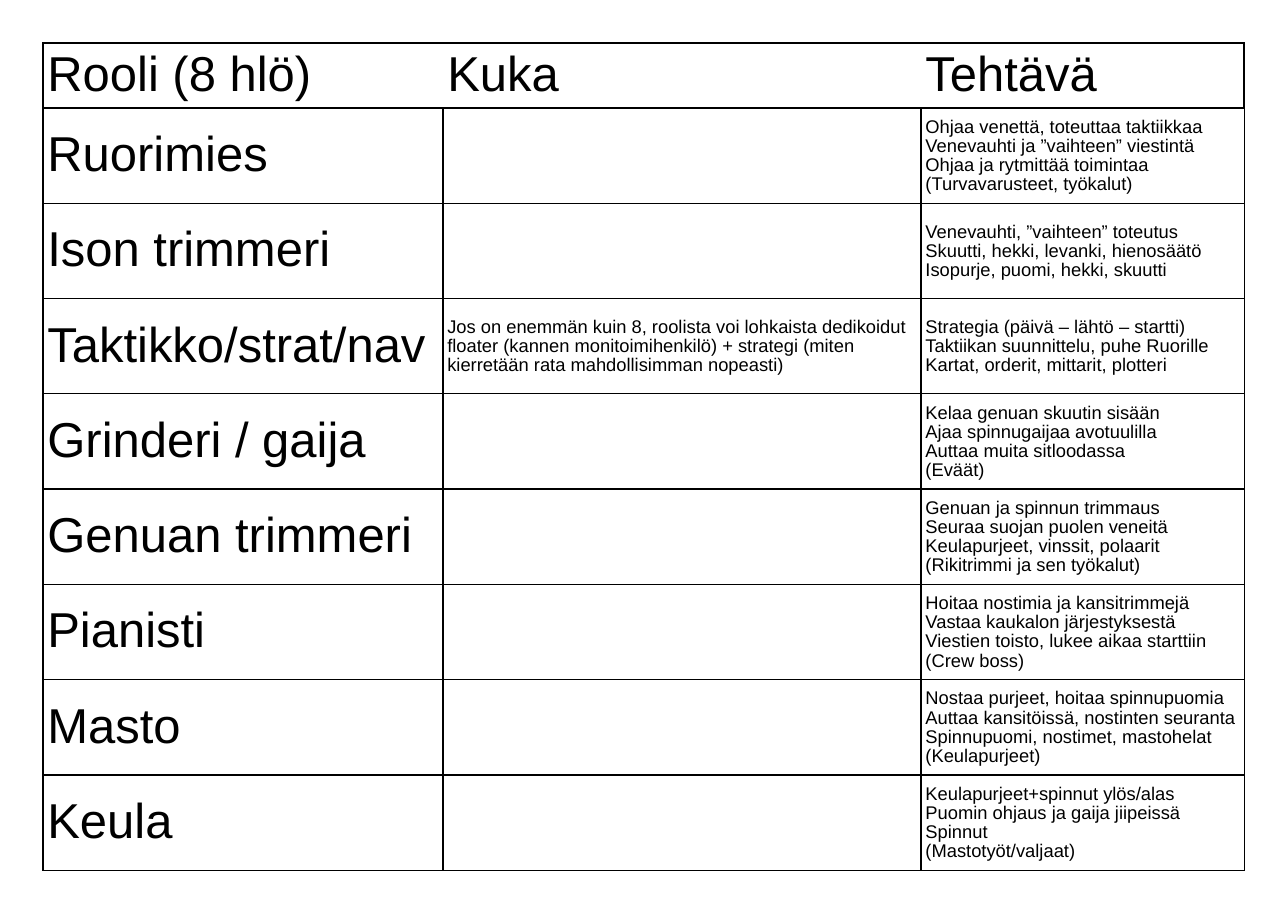
from lxml import etree
from pptx import Presentation
from pptx import util as u
from pptx.dml.color import RGBColor
from pptx.enum import text
from pptx.oxml.ns import qn

PX = 4572  # 200 px to the inch
INK = "000000"
THIN, THICK = 1, 1.42
HEADINGS = ["Rooli (8 hlö)", "Kuka", "Tehtävä"]
EXTRA_CREW = ("Jos on enemmän kuin 8, roolista voi lohkaista dedikoidut floater "
              "(kannen monitoimihenkilö) + strategi (miten kierretään rata "
              "mahdollisimman nopeasti)")
CREW = [
    ("Ruorimies", "", ["Ohjaa venettä, toteuttaa taktiikkaa",
                       "Venevauhti ja ”vaihteen” viestintä",
                       "Ohjaa ja rytmittää toimintaa",
                       "(Turvavarusteet, työkalut)"]),
    ("Ison trimmeri", "", ["Venevauhti, ”vaihteen” toteutus",
                           "Skuutti, hekki, levanki, hienosäätö",
                           "Isopurje, puomi, hekki, skuutti"]),
    ("Taktikko/strat/nav", EXTRA_CREW, ["Strategia (päivä – lähtö – startti)",
                                        "Taktiikan suunnittelu, puhe Ruorille",
                                        "Kartat, orderit, mittarit, plotteri"]),
    ("Grinderi / gaija", "", ["Kelaa genuan skuutin sisään",
                              "Ajaa spinnugaijaa avotuulilla",
                              "Auttaa muita sitloodassa",
                              "(Eväät)"]),
    ("Genuan trimmeri", "", ["Genuan ja spinnun trimmaus",
                             "Seuraa suojan puolen veneitä",
                             "Keulapurjeet, vinssit, polaarit",
                             "(Rikitrimmi ja sen työkalut)"]),
    ("Pianisti", "", ["Hoitaa nostimia ja kansitrimmejä",
                      "Vastaa kaukalon järjestyksestä",
                      "Viestien toisto, lukee aikaa starttiin",
                      "(Crew boss)"]),
    ("Masto", "", ["Nostaa purjeet, hoitaa spinnupuomia",
                   "Auttaa kansitöissä, nostinten seuranta",
                   "Spinnupuomi, nostimet, mastohelat",
                   "(Keulapurjeet)"]),
    ("Keula", "", ["Keulapurjeet+spinnut ylös/alas",
                   "Puomin ohjaus ja gaija jiipeissä",
                   "Spinnut",
                   "(Mastotyöt/valjaat)"]),
]


def px(length):
    return u.Emu(length * PX)


def color(hex_code):
    return RGBColor.from_string(hex_code)


def write(frame, lines, size=12, font="Arial", ink=INK, spacing=0.93):
    frame.text = "\n".join(lines)
    for paragraph in frame.paragraphs:
        paragraph.line_spacing = spacing
        paragraph.font.size = u.Pt(size)
        for run in paragraph.runs:
            run.font.size = u.Pt(size)
            run.font.name = font
            run.font.color.rgb = color(ink)


def set_borders(cell, left=THIN, right=THIN, top=THIN, bottom=THIN):
    """Draw the cell's four sides in points; a width of 0 hides the side."""
    properties = cell._tc.get_or_add_tcPr()
    for side, width in zip("LRTB", (left, right, top, bottom)):
        line = etree.SubElement(properties, qn(f"a:ln{side}"), w=str(u.Pt(width)))
        if width:
            fill = etree.SubElement(line, qn("a:solidFill"))
            etree.SubElement(fill, qn("a:srgbClr"), val=INK)
        else:
            etree.SubElement(line, qn("a:noFill"))


def fill_cell(cell, lines, size, **borders):
    set_borders(cell, **borders)
    cell.fill.background()
    cell.vertical_anchor = text.MSO_ANCHOR.MIDDLE
    cell.margin_left = cell.margin_right = cell.margin_bottom = px(8)
    cell.margin_top = px(10)
    write(cell.text_frame, lines, size=size)


def add_crew_table(slide, left, top, widths, heading_height, role_height):
    heights = [heading_height] + [role_height] * len(CREW)
    table = slide.shapes.add_table(len(heights), len(widths), px(left), px(top),
                                   px(sum(widths)), px(sum(heights))).table
    table.first_row = table.horz_banding = False
    for column, width in zip(table.columns, widths):
        column.width = px(width)
    for row, height in zip(table.rows, heights):
        row.height = px(height)

    last = len(HEADINGS) - 1
    for col, heading in enumerate(HEADINGS):
        fill_cell(table.cell(0, col), [heading], 32, top=THICK,
                  left=THICK if col == 0 else 0,
                  right=THICK if col == last else 0)
    for row, (role, who, duties) in enumerate(CREW, start=1):
        fill_cell(table.cell(row, 0), [role], 32)
        fill_cell(table.cell(row, 1), [who], 12)
        fill_cell(table.cell(row, 2), duties, 12)


def main():
    deck = Presentation()
    deck.slide_width, deck.slide_height = px(2338), px(1654)
    slide = deck.slides.add_slide(deck.slide_layouts[6])
    add_crew_table(slide, left=78, top=78, widths=[726, 868, 587],
                   heading_height=118, role_height=173)
    deck.save("out.pptx")


if __name__ == "__main__":
    main()
